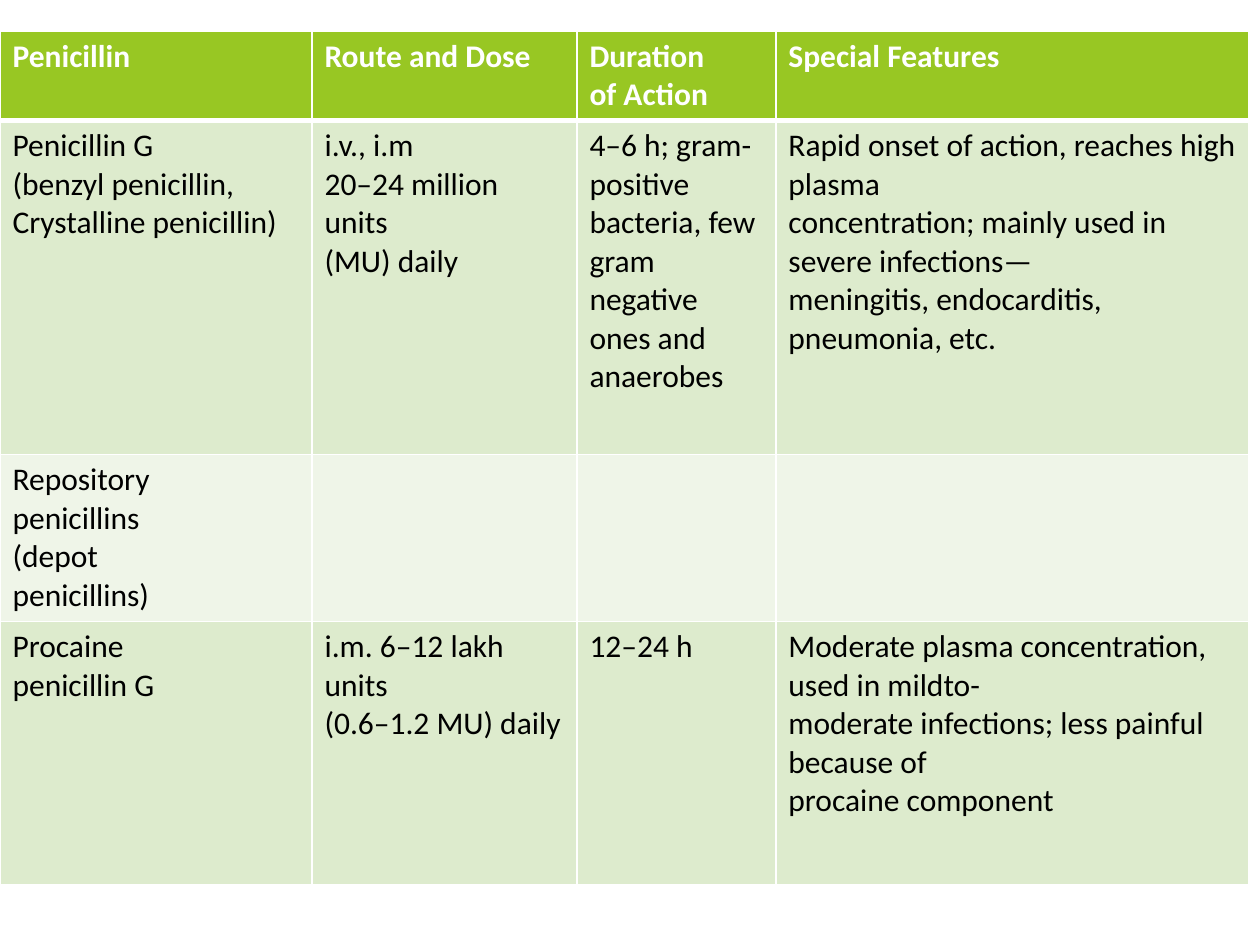
import pptx
import pptx.util
import pptx.dml.color
import pptx.oxml
import pptx.oxml.ns
from lxml import etree

# Content: one list per row, line breaks split paragraphs
ROWS = [
    ["Penicillin", "Route and Dose", "Duration\nof Action", "Special Features"],
    [
        "Penicillin G\n(benzyl penicillin,\nCrystalline penicillin)",
        "i.v., i.m\n20–24 million units\n(MU) daily",
        "4–6 h; gram-positive bacteria, few gram negative\n"
        "ones and anaerobes",
        "Rapid onset of action, reaches high plasma\n"
        "concentration; mainly used in severe infections—\n"
        "meningitis, endocarditis, pneumonia, etc.",
    ],
    ["Repository\npenicillins\n(depot\npenicillins)", "", "", ""],
    [
        "Procaine\npenicillin G",
        "i.m. 6–12 lakh units\n(0.6–1.2 MU) daily",
        "12–24 h",
        "Moderate plasma concentration, used in mildto-\n"
        "moderate infections; less painful because of\n"
        "procaine component",
    ],
]

# Layout in px, 126 to the inch
PX = 914400 // 126
WIDE, HIGH = 1260, 945
LEFT, TOP = 0, 31
COLS = [312, 265, 199, 473]
TALL = [88, 334, 167, 263]

THEME = {
    "head": "98C723",
    "bands": ["DDEBCD", "EFF5E8"],
    "line": "FFFFFF",
    "thin": 1,
    "thick": 3,
    "title": {"name": "Calibri", "size": pptx.util.Pt(18), "bold": True},
    "body": {"name": "Calibri", "size": pptx.util.Pt(18), "bold": False},
    "light": "FFFFFF",
    "dark": "000000",
}


def px(num):
    return pptx.util.Emu(num * PX)


def color(code):
    return pptx.dml.color.RGBColor.from_string(code)


def border(cell, sides):
    """Draw the cell edges; they must come before the fill."""
    props = cell._tc.get_or_add_tcPr()
    qn = pptx.oxml.ns.qn
    for spot, (side, width) in enumerate(sides.items()):
        line = etree.Element(qn("a:ln" + side), w=str(pptx.util.Pt(width)))
        fill = etree.SubElement(line, qn("a:solidFill"))
        etree.SubElement(fill, qn("a:srgbClr"), val=THEME["line"])
        props.insert(spot, line)


def write(cell, text, font, ink):
    cell.text_frame.text = text
    for para in cell.text_frame.paragraphs:
        for key, val in font.items():
            setattr(para.font, key, val)
        para.font.color.rgb = color(ink)
        for run in para.runs:
            for key, val in font.items():
                setattr(run.font, key, val)
            run.font.color.rgb = color(ink)


def main():
    deck = pptx.Presentation()
    deck.slide_width, deck.slide_height = px(WIDE), px(HIGH)
    slide = deck.slides.add_slide(deck.slide_layouts[6])

    # Table grid
    frame = slide.shapes.add_table(
        len(ROWS), len(COLS), px(LEFT), px(TOP), px(sum(COLS)), px(sum(TALL)))
    table = frame.table
    for col, width in zip(table.columns, COLS):
        col.width = px(width)
    for row, height in zip(table.rows, TALL):
        row.height = px(height)

    # Cells: header row, then alternating bands
    for r, texts in enumerate(ROWS):
        head = r == 0
        fill = THEME["head"] if head else THEME["bands"][(r - 1) % 2]
        font = THEME["title" if head else "body"]
        ink = THEME["light" if head else "dark"]
        sides = dict.fromkeys("LRTB", THEME["thin"])
        if head:
            sides["B"] = THEME["thick"]
        if r == 1:
            sides["T"] = THEME["thick"]
        for c, text in enumerate(texts):
            cell = table.cell(r, c)
            cell.fill.solid()
            cell.fill.fore_color.rgb = color(fill)
            border(cell, sides)
            write(cell, text, font, ink)

    deck.save("out.pptx")


if __name__ == "__main__":
    main()
